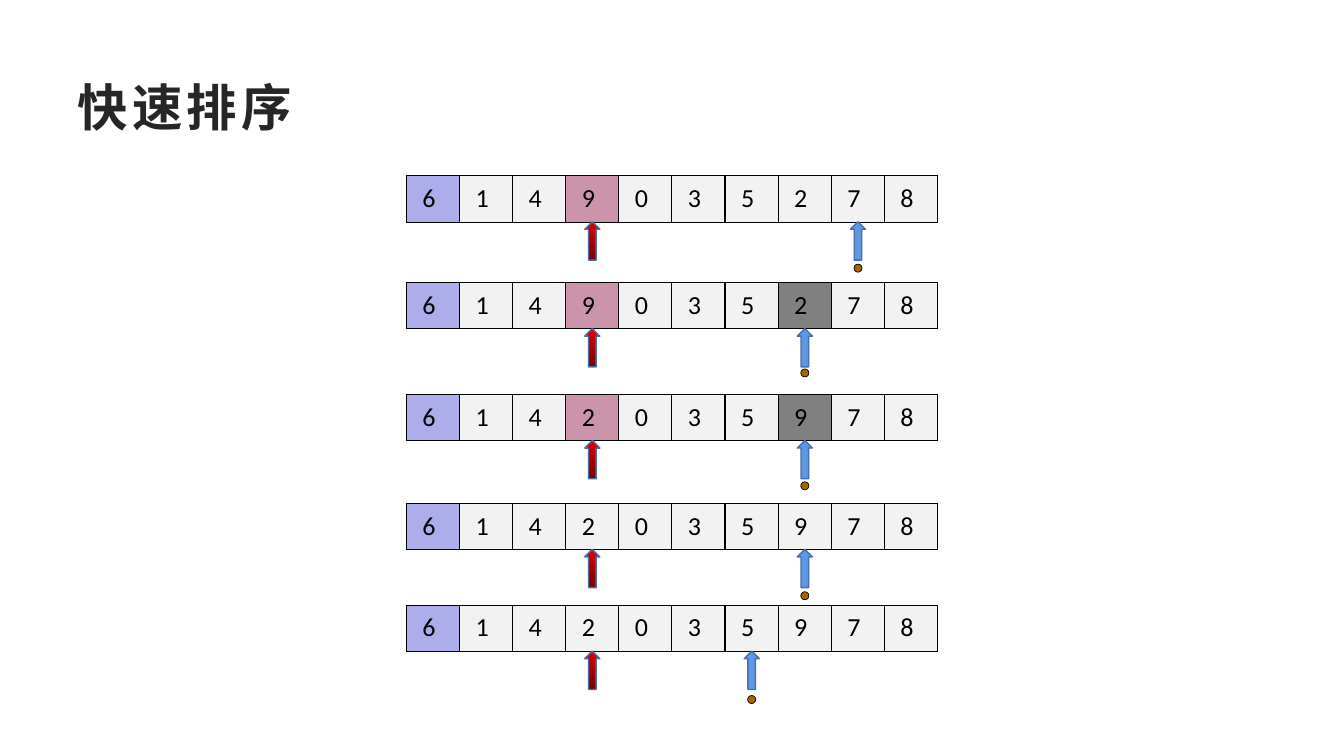
from lxml import etree
from pptx import Presentation
from pptx.dml.color import RGBColor
from pptx.enum import shapes, text
from pptx.oxml import ns
from pptx.util import Inches, Pt

# Content: one dict per step of the partition
TITLE = "快速排序"
STEPS = [
    {"top": 1.74, "digits": "6149035278", "marks": {3: "left"}, "right": 8, "dot": 2.62},
    {"top": 2.80, "digits": "6149035278", "marks": {3: "left", 7: "right"}, "right": 7, "dot": 3.66},
    {"top": 3.91, "digits": "6142035978", "marks": {3: "left", 7: "right"}, "right": 7, "dot": 4.78},
    {"top": 4.99, "digits": "6142035978", "marks": {}, "right": 7, "dot": 5.87},
    {"top": 6.00, "digits": "6142035978", "marks": {}, "right": 6, "dot": 6.90},
]
LEFT_COLUMN = 3
COLORS = {
    "title": "262626", "ink": "000000", "cell": "F2F2F2", "pivot": "ADADEB",
    "left": "CC94AB", "right": "808080", "arrow": "6096E6", "edge": "476FAA",
    "red": "E30000", "dark_red": "760303", "dot": "AA6500",
}
TABLE_LEFT, TABLE_WIDTH, ROW_HEIGHT = 4.03, 5.27, 0.46
COLUMN_WIDTH = TABLE_WIDTH / 10
ARROW_SIZE, DOT_SIZE = (0.15, 0.38), (0.08, 0.08)
BORDERS = {"lnL": 1, "lnR": 1, "lnT": 0.25, "lnB": 0.25}


def rgb(name):
    return RGBColor.from_string(COLORS[name])


def style_run(r, color, **formats):
    for key, value in formats.items():
        setattr(r.font, key, value)
    r.font.color.rgb = rgb(color)


def add_borders(cell):
    tcPr = cell._tc.get_or_add_tcPr()
    for side, width in BORDERS.items():
        ln = etree.SubElement(tcPr, ns.qn("a:" + side), w=str(Pt(width)))
        fill = etree.SubElement(ln, ns.qn("a:solidFill"))
        etree.SubElement(fill, ns.qn("a:srgbClr"), val=COLORS["ink"])


def add_array(sl, step):
    frame = sl.shapes.add_table(1, len(step["digits"]), Inches(TABLE_LEFT), Inches(step["top"]),
                                Inches(TABLE_WIDTH), Inches(ROW_HEIGHT))
    table = frame.table
    table.first_row = table.horz_banding = False
    marks = {0: "pivot", **step["marks"]}
    for i, digit in enumerate(step["digits"]):
        table.columns[i].width = Inches(COLUMN_WIDTH)
        cell = table.cell(0, i)
        formats = {"margin_left": Inches(0.16), "margin_right": 0, "margin_top": 0,
                   "margin_bottom": 0, "vertical_anchor": text.MSO_ANCHOR.MIDDLE}
        for key, value in formats.items():
            setattr(cell, key, value)
        add_borders(cell)
        cell.fill.solid()
        cell.fill.fore_color.rgb = rgb(marks.get(i, "cell"))
        r = cell.text_frame.paragraphs[0].add_run()
        r.text = digit
        style_run(r, "ink", size=Pt(18.6), name="Calibri")


def add_marker(sl, kind, column, top, size, fill, line, line_width):
    """Place a shape centred under a column; two fill names make a gradient."""
    width, height = size
    left = TABLE_LEFT + (column + 0.5) * COLUMN_WIDTH - width / 2
    sp = sl.shapes.add_shape(kind, Inches(left), Inches(top), Inches(width), Inches(height))
    sp.shadow.inherit = False
    if len(fill) == 2:
        sp.fill.gradient()
        sp.fill.gradient_angle = 270
        for stop, name in zip(sp.fill.gradient_stops, fill):
            stop.color.rgb = rgb(name)
    else:
        sp.fill.solid()
        sp.fill.fore_color.rgb = rgb(fill[0])
    sp.line.color.rgb = rgb(line)
    sp.line.width = Pt(line_width)


def main():
    prs = Presentation()
    prs.slide_width, prs.slide_height = Inches(13.33), Inches(7.5)
    sl = prs.slides.add_slide(prs.slide_layouts[5])

    # Title
    title = sl.shapes.title
    title.left, title.top, title.width, title.height = map(Inches, (0.67, 0.67, 5.3, 0.77))
    tf = title.text_frame
    tf.auto_size = text.MSO_AUTO_SIZE.NONE
    tf.vertical_anchor = text.MSO_ANCHOR.MIDDLE
    p = tf.paragraphs[0]
    p.alignment = text.PP_ALIGN.LEFT
    r = p.add_run()
    r.text = TITLE
    style_run(r, "title", size=Pt(36), name="Arial", bold=True)
    r.font._element.set("spc", "300")

    # Arrays with their two pointers and dot
    arrow, oval = shapes.MSO_SHAPE.UP_ARROW, shapes.MSO_SHAPE.OVAL
    for step in STEPS:
        add_array(sl, step)
        bottom = step["top"] + ROW_HEIGHT
        add_marker(sl, arrow, step["right"], bottom, ARROW_SIZE, ["arrow"], "edge", 1)
        add_marker(sl, arrow, LEFT_COLUMN, bottom, ARROW_SIZE, ["red", "dark_red"], "edge", 1)
        add_marker(sl, oval, step["right"], step["dot"], DOT_SIZE, ["dot"], "ink", 0.5)

    prs.save("out.pptx")


if __name__ == "__main__":
    main()
